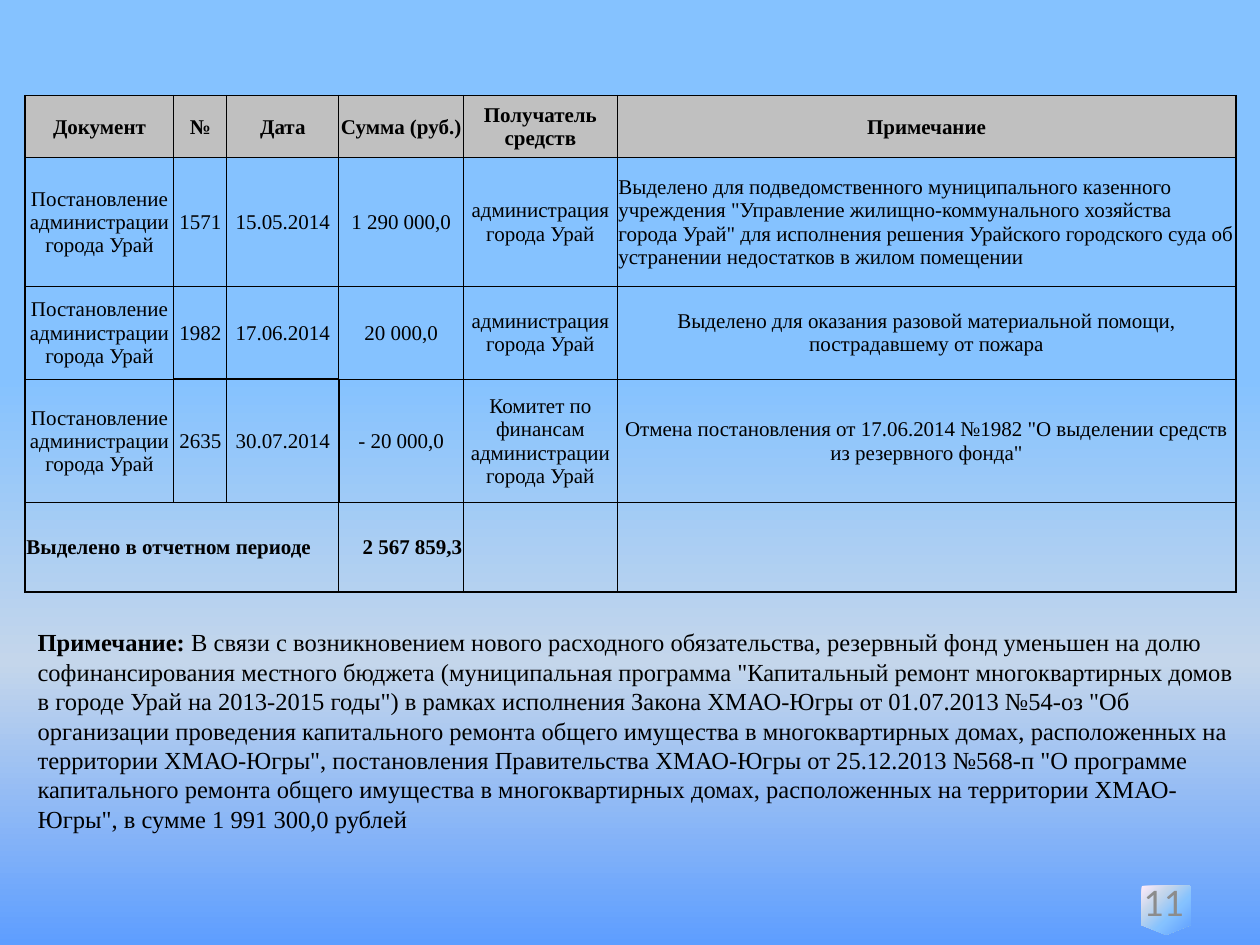
from lxml.etree import SubElement as Sub
from pptx import Presentation
from pptx.dml.color import RGBColor as RGB
from pptx.enum.shapes import MSO_SHAPE as Kind
from pptx.enum.text import MSO_ANCHOR as Anchor, PP_ALIGN as Align
from pptx.oxml.ns import qn
from pptx.util import Inches, Pt

COLORS = {
    "ink": "000000", "head": "C0C0C0", "page": "8C8C8C",
    "sky": "85C2FF", "mist": "C4D6EB", "blue": "5E9EFF", "pink": "FFEBFA",
}
SERIF, SANS = "Times New Roman", "Lato"
BACK = [(40, "sky"), (70, "mist"), (100, "blue"), (100, "pink")]
BADGE = [(0, "blue"), (40, "sky"), (70, "mist"), (100, "pink")]

DECREE = "Постановление администрации города Урай"
ADMIN = "администрация города Урай"
ROWS = [
    ["Документ", "№", "Дата", "Сумма (руб.)", "Получатель средств", "Примечание"],
    [DECREE, "1571", "15.05.2014", "1 290 000,0", ADMIN,
     'Выделено для подведомственного муниципального казенного учреждения '
     '"Управление жилищно-коммунального хозяйства города Урай" для исполнения '
     'решения Урайского городского суда об устранении недостатков в жилом помещении'],
    [DECREE, "1982", "17.06.2014", "20 000,0", ADMIN,
     "Выделено для оказания разовой материальной помощи, пострадавшему от пожара"],
    [DECREE, "2635", "30.07.2014", "- 20 000,0",
     "Комитет по финансам администрации города Урай",
     'Отмена постановления от 17.06.2014 №1982 "О выделении средств из резервного фонда"'],
    ["Выделено в отчетном периоде", "", "", "2 567 859,3", "", ""],
]
WIDTHS = [1.18, 0.42, 0.89, 0.99, 1.22, 4.91]
HEIGHTS = [0.49, 1.02, 0.74, 0.98, 0.71]
ALIGNS = {(1, 5): Align.LEFT, (4, 0): Align.LEFT, (4, 3): Align.RIGHT}
BOXED = {(3, 1), (3, 2)}
NOTE = [
    ("Примечание: ", True),
    ('В связи с возникновением нового расходного обязательства, резервный фонд '
     'уменьшен на долю софинансирования местного бюджета (муниципальная программа '
     '"Капитальный ремонт многоквартирных домов в городе Урай на 2013-2015 годы") '
     'в рамках исполнения Закона ХМАО-Югры от 01.07.2013 №54-оз "Об организации '
     'проведения капитального ремонта общего имущества в многоквартирных домах, '
     'расположенных на территории ХМАО-Югры", постановления Правительства ХМАО-Югры '
     'от 25.12.2013 №568-п "О программе капитального ремонта общего имущества в '
     'многоквартирных домах, расположенных на территории ХМАО-Югры", в сумме '
     '1 991 300,0 рублей', False),
]


def style(font, size, face=SERIF, color="ink", bold=False):
    font.size, font.name, font.bold = Pt(size), face, bold
    font.color.rgb = RGB.from_string(COLORS[color])


def blend(fill, root, stops, radial=False):
    fill.gradient()
    grad = root.find(".//" + qn("a:gradFill"))
    for child in list(grad):
        grad.remove(child)
    group = Sub(grad, qn("a:gsLst"))
    for pos, name in stops:
        stop = Sub(group, qn("a:gs"), pos=str(pos * 1000))
        Sub(stop, qn("a:srgbClr"), val=COLORS[name])
    if radial:
        ring = Sub(grad, qn("a:path"), {"path": "circle"})
        Sub(ring, qn("a:fillToRect"), l="100000", t="100000")
    else:
        Sub(grad, qn("a:lin"), ang="5400000", scaled="0")


def border(cell, row, col):
    props = cell._tc.get_or_add_tcPr()
    last, end = len(ROWS) - 1, len(WIDTHS) - 1
    sides = [
        ("L", col == 0 or (row, col - 1) in BOXED),
        ("R", col == end or (row, col) in BOXED and col == 1),
        ("T", row == 0 or (row, col) in BOXED),
        ("B", row == last or (row, col) in BOXED or (row + 1, col) in BOXED),
    ]
    for spot, (side, heavy) in enumerate(sides):
        line = Sub(props, qn("a:ln" + side), w=str(Pt(1 if heavy else 0.5)))
        Sub(Sub(line, qn("a:solidFill")), qn("a:srgbClr"), val=COLORS["ink"])
        props.insert(spot, line)


def add_grid(slide):
    frame = slide.shapes.add_table(
        len(ROWS), len(WIDTHS), Inches(0.2), Inches(0.76),
        Inches(sum(WIDTHS)), Inches(sum(HEIGHTS)))
    table = frame.table
    table.first_row = table.horz_banding = False
    for col, width in zip(table.columns, WIDTHS):
        col.width = Inches(width)
    for row, height in zip(table.rows, HEIGHTS):
        row.height = Inches(height)
    table.cell(4, 0).merge(table.cell(4, 2))
    for r, texts in enumerate(ROWS):
        for c, text in enumerate(texts):
            cell = table.cell(r, c)
            cell.margin_left = cell.margin_right = cell.margin_top = Inches(0.01)
            cell.margin_bottom = 0
            cell.vertical_anchor = Anchor.MIDDLE
            if r == 0:
                cell.fill.solid()
                cell.fill.fore_color.rgb = RGB.from_string(COLORS["head"])
            else:
                cell.fill.background()
            para = cell.text_frame.paragraphs[0]
            para.text = text
            para.alignment = ALIGNS.get((r, c), Align.CENTER)
            style(para.font, 12)
            for run in para.runs:
                style(run.font, 12, bold=r in (0, 4))
            border(cell, r, c)


def add_note(slide):
    box = slide.shapes.add_textbox(Inches(0.2), Inches(4.93), Inches(9.69), Inches(1.75))
    box.text_frame.word_wrap = True
    for text, bold in NOTE:
        run = box.text_frame.paragraphs[0].add_run()
        run.text = text
        style(run.font, 14, bold=bold)


def add_page(slide):
    badge = slide.shapes.add_shape(
        Kind.FLOWCHART_OFFPAGE_CONNECTOR,
        Inches(9.06), Inches(7.03), Inches(0.39), Inches(0.39))
    badge.shadow.inherit = False
    badge.line.fill.background()
    blend(badge.fill, badge._element, BADGE, radial=True)
    box = slide.shapes.add_textbox(Inches(7.17), Inches(6.95), Inches(2.33), Inches(0.43))
    frame = box.text_frame
    frame.word_wrap = True
    frame.vertical_anchor = Anchor.MIDDLE
    frame.text = "11"
    para = frame.paragraphs[0]
    para.alignment = Align.RIGHT
    style(para.runs[0].font, 20, SANS, "page")


def main():
    deck = Presentation()
    deck.slide_width, deck.slide_height = Inches(10), Inches(7.5)
    slide = deck.slides.add_slide(deck.slide_layouts[6])
    blend(slide.background.fill, slide._element, BACK)
    add_page(slide)
    add_grid(slide)
    add_note(slide)
    deck.save("out.pptx")


if __name__ == "__main__":
    main()
